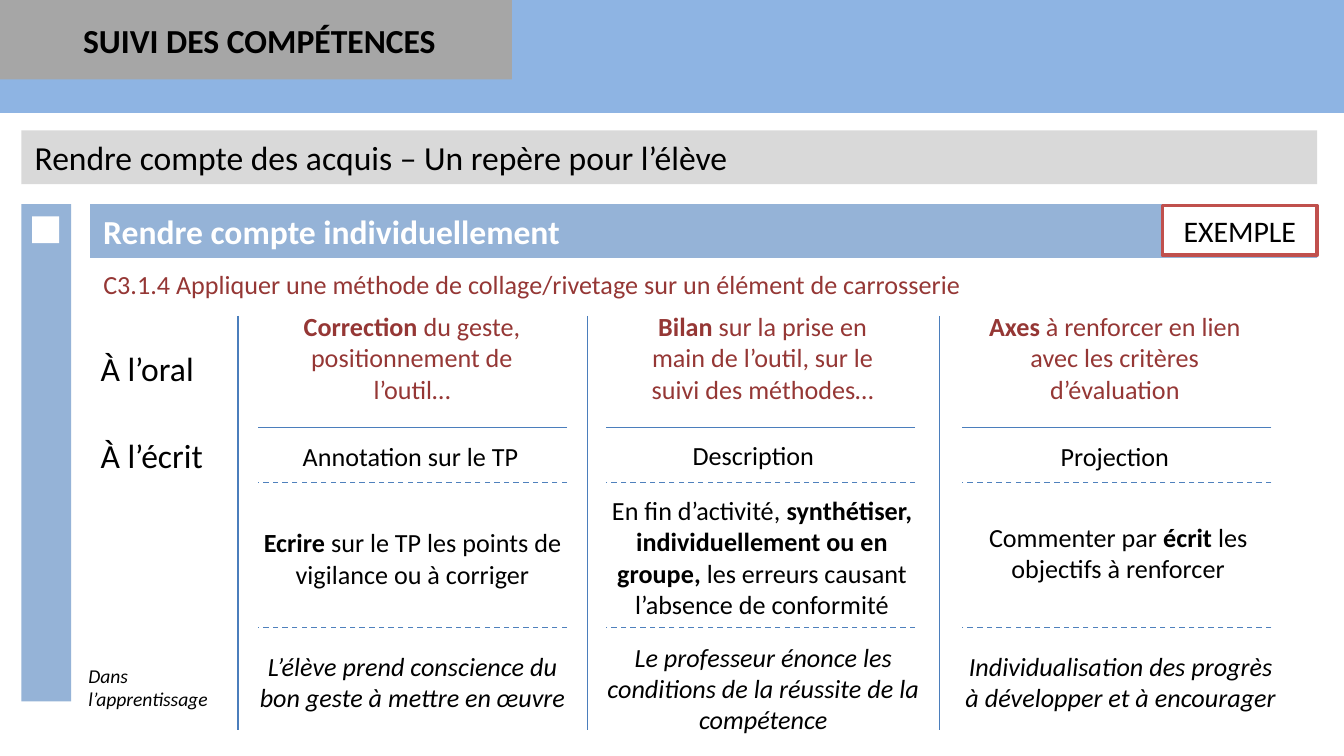
from lxml import etree
from pptx import Presentation
from pptx.dml.color import RGBColor
from pptx.enum.dml import MSO_LINE
from pptx.enum.shapes import MSO_CONNECTOR, MSO_SHAPE
from pptx.enum.text import MSO_ANCHOR, PP_ALIGN
from pptx.oxml.ns import qn
from pptx.util import Inches, Pt

BLACK = RGBColor(0x00, 0x00, 0x00)
WHITE = RGBColor(0xFF, 0xFF, 0xFF)
SKY = RGBColor(0x8E, 0xB4, 0xE3)
BLUE = RGBColor(0x95, 0xB3, 0xD7)
RULE_BLUE = RGBColor(0x4B, 0x7E, 0xBC)
DASH_BLUE = RGBColor(0x4F, 0x81, 0xBD)
GREY = RGBColor(0xA6, 0xA6, 0xA6)
PALE_GREY = RGBColor(0xD9, 0xD9, 0xD9)
RED = RGBColor(0xC0, 0x50, 0x4D)
DARK_RED = RGBColor(0x95, 0x37, 0x35)

prs = Presentation()
prs.slide_width = Inches(10)
prs.slide_height = Inches(10 * 9 / 16)
slide = prs.slides.add_slide(prs.slide_layouts[6])


def add_block(box, runs=(), size=14, color=BLACK, align=PP_ALIGN.LEFT, fill=None, wrap=True):
    """Add a filled rectangle, or a text box without fill; runs are (text, style), style "b" or "i"."""
    area = [Inches(value) for value in box]
    if fill is None:
        block = slide.shapes.add_textbox(*area)
    else:
        block = slide.shapes.add_shape(MSO_SHAPE.RECTANGLE, *area)
        block.shadow.inherit = False
        block.fill.solid()
        block.fill.fore_color.rgb = fill
        block.line.fill.background()
        block.text_frame.vertical_anchor = MSO_ANCHOR.MIDDLE
    block.text_frame.word_wrap = wrap
    paragraph = block.text_frame.paragraphs[0]
    paragraph.alignment = align
    for text, style in runs:
        run = paragraph.add_run()
        run.text = text
        run.font.name = "Calibri"
        run.font.size = Pt(size)
        run.font.bold = style == "b"
        run.font.italic = style == "i"
        run.font.color.rgb = color
    return block


def add_rule(x1, y1, x2, y2, color=RULE_BLUE, dash=None):
    rule = slide.shapes.add_connector(
        MSO_CONNECTOR.STRAIGHT, Inches(x1), Inches(y1), Inches(x2), Inches(y2))
    rule.line.color.rgb = color
    rule.line.width = Pt(0.75)
    if dash:
        rule.line.dash_style = dash
    etree.SubElement(rule._element.spPr, qn("a:effectLst"))


# Header and title bars
add_block((0, 0, 10, 0.84), fill=SKY)
add_block((0, 0, 3.81, 0.59), fill=GREY)
add_block((0.52, 0.1, 2.85, 0.4), [("SUIVI DES COMPÉTENCES", "b")], 18, wrap=False)
add_block((0.16, 0.97, 9.64, 0.4),
          [("Rendre compte des acquis – Un repère pour l’élève", "")], 18, fill=PALE_GREY)
add_block((0.16, 1.52, 0.37, 3.7), fill=BLUE)
add_block((0.24, 1.61, 0.2, 0.2), fill=WHITE)
add_block((0.67, 1.52, 9.13, 0.4),
          [("Rendre compte individuellement", "b")], 18, WHITE, fill=BLUE)
example = add_block((8.65, 1.53, 1.15, 0.37), [("EXEMPLE", "")], 16,
                    align=PP_ALIGN.CENTER, fill=WHITE)
example.line.color.rgb = RED
example.line.width = Pt(2)
add_block((0.67, 1.95, 7.08, 0.34),
          [("C3.1.4 Appliquer une méthode de collage/rivetage sur un élément de carrosserie", "")],
          color=DARK_RED)

# Row labels
add_block((0.65, 2.54, 1.07, 0.4), [("À l’oral", "")], 18)
add_block((0.65, 3.19, 1.1, 0.4), [("À l’écrit", "")], 18)
add_block((0.56, 4.89, 1.18, 0.45), [("Dans l’apprentissage", "i")], 10.5)

# Column separators and row rules
for x in (1.77, 4.37, 6.99):
    add_rule(x, 2.35, x, 5.43)
for left in (1.92, 4.51, 7.16):
    right = left + 2.3
    add_rule(right, 3.18, left, 3.18)
    for y in (3.59, 4.67):
        add_rule(right, y, left, y, DASH_BLUE, MSO_LINE.DASH)

# Each row: width, colour, then left, top, height and runs per column
rows = [
    (2.15, DARK_RED, [
        (1.99, 2.26, 0.81, [("Correction", "b"), (" du geste, positionnement de l’outil…", "")]),
        (4.6, 2.26, 0.81, [("Bilan ", "b"),
                           ("sur la prise en main de l’outil, sur le suivi des méthodes…", "")]),
        (7.22, 2.26, 0.81, [("Axes ", "b"),
                            ("à renforcer en lien avec les critères d’évaluation", "")]),
    ]),
    (2.15, BLACK, [
        (1.98, 3.23, 0.34, [("Annotation sur le TP", "")]),
        (4.53, 3.22, 0.34, [("Description", "")]),
        (7.22, 3.23, 0.34, [("Projection", "")]),
    ]),
    (2.62, BLACK, [
        (1.76, 3.87, 0.57, [("Ecrire ", "b"),
                            ("sur le TP les points de vigilance ou à corriger", "")]),
        (4.36, 3.63, 1.04, [("En fin d’activité, ", ""),
                            ("synthétiser, individuellement ou en groupe, ", "b"),
                            ("les erreurs causant l’absence de conformité", "")]),
        (7.01, 3.83, 0.57, [("Commenter par ", ""), ("écrit", "b"),
                            (" les objectifs à renforcer", "")]),
    ]),
    (2.56, BLACK, [
        (1.79, 4.79, 0.57, [("L’élève prend conscience du bon geste à mettre en œuvre", "i")]),
        (4.4, 4.72, 0.81,
         [("Le professeur énonce les conditions de la réussite de la compétence", "i")]),
        (7.06, 4.79, 0.57,
         [("Individualisation des progrès à développer et à encourager", "i")]),
    ]),
]
for width, color, cells in rows:
    for left, top, height, runs in cells:
        add_block((left, top, width, height), runs, color=color, align=PP_ALIGN.CENTER)

prs.save("out.pptx")
